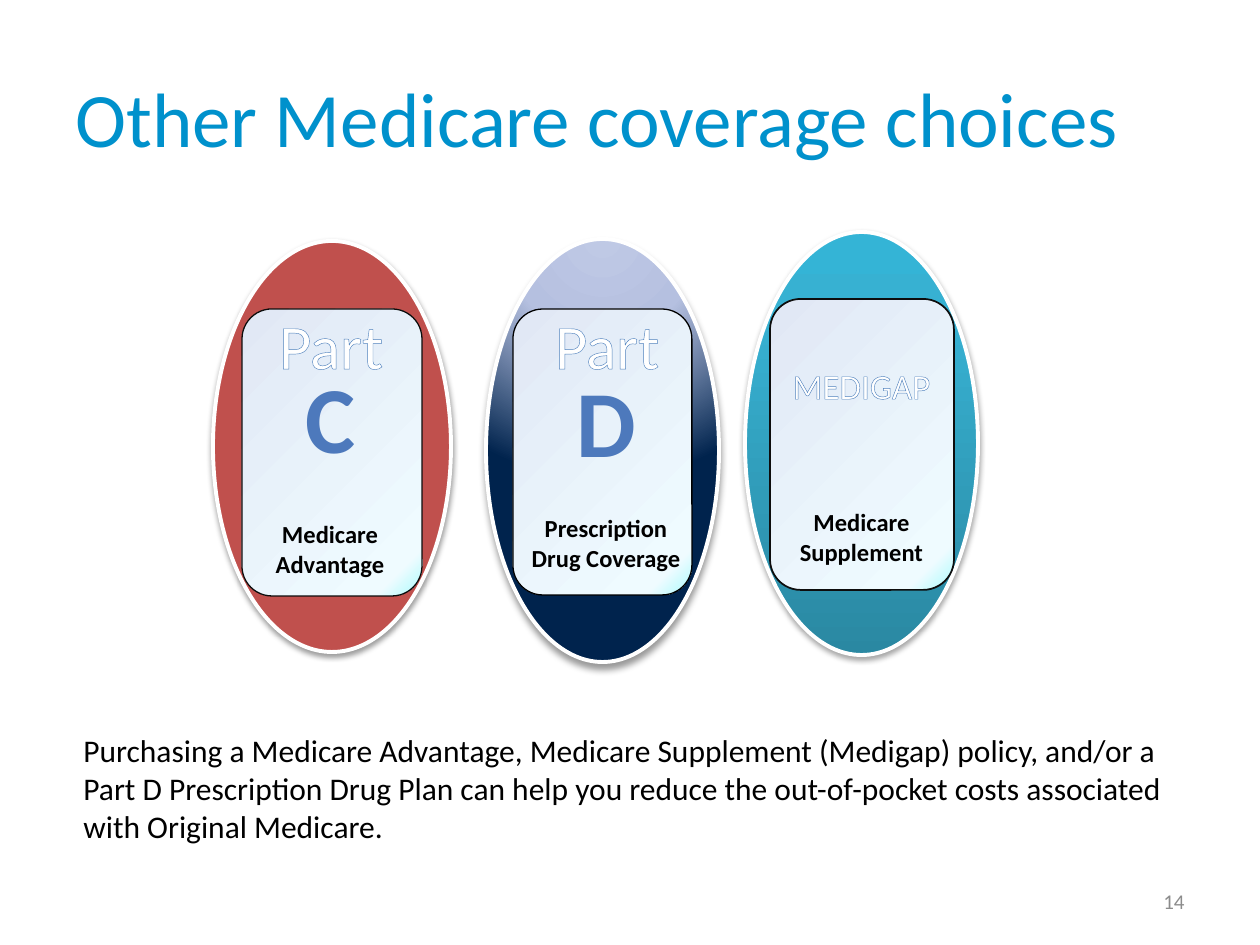
from lxml.etree import SubElement
from pptx import Presentation
from pptx.dml.color import RGBColor
from pptx.enum.shapes import MSO_SHAPE
from pptx.enum.text import MSO_ANCHOR, PP_ALIGN
from pptx.oxml.ns import qn
from pptx.util import Emu, Pt

TITLE = "Other Medicare coverage choices"
NOTE = ("Purchasing a Medicare Advantage, Medicare Supplement (Medigap) policy, "
        "and/or a Part D Prescription Drug Plan can help you reduce the "
        "out-of-pocket costs associated with Original Medicare.")
NUMBER = "14"

GLASS = {"stops": [(0, "ABFBFD"), (10, "EFFBFF"), (100, "E1E8F5")],
         "rect": (100, 100, 0, 0)}
NAVY = {"stops": [(0, "BFC9E5"), (40, "B5C0E0"), (100, "00234D")],
        "rect": (50, -80, 50, 180)}
TEAL = {"stops": [(0, "2A88A2"), (80, "37B1D2"), (100, "34B4D6")], "angle": 270}
INK = {"stops": [(0, "7494C9"), (49, "4D79BC"), (50, "346AAA"),
                 (92, "325F94"), (100, "315D91")], "angle": 90}

PLANS = [
    {"oval": (213, 241, 238, 411), "fill": "C0504D", "shade": (38, 3.1, 1.6),
     "card": (242, 309, 180, 287), "edge": ("0D0D0D", 0.75),
     "head": ("Part", 36, (263, 300, 136, 89)),
     "mark": ("C", (261, 353, 139, 127)),
     "label": ("Medicare Advantage", (238, 513, 184, 72))},
    {"oval": (486, 239, 233, 423), "fill": NAVY, "shade": (40, 4, 3),
     "card": (513, 309, 179, 286), "edge": ("000000", 0.75),
     "head": ("Part", 36, (539, 300, 136, 89)),
     "mark": ("D", (537, 357, 139, 127)),
     "label": ("Prescription Drug Coverage", (514, 507, 184, 72))},
    {"oval": (745, 232, 233, 423), "fill": TEAL, "shade": (35, 3.1, 1.8),
     "card": (770, 299, 184, 291), "edge": ("0D0D0D", 1),
     "head": ("MEDIGAP", 20, (769, 358, 185, 56)),
     "mark": None,
     "label": ("Medicare Supplement", (769, 501, 185, 72))},
]


def px(n):
    return Emu(round(n * 914400 / 126))


def color(code):
    return RGBColor.from_string(code)


def node(host, tag, **attrs):
    return SubElement(host, qn(tag), {k: str(v) for k, v in attrs.items()})


def paint(fill, host, look):
    if isinstance(look, str):
        fill.solid()
        fill.fore_color.rgb = color(look)
        return
    fill.background()
    old = host.find(qn("a:noFill"))
    grad = node(host, "a:gradFill", rotWithShape=1)
    stops = node(grad, "a:gsLst")
    for at, code in look["stops"]:
        stop = node(stops, "a:gs", pos=at * 1000)
        node(stop, "a:srgbClr", val=code)
    if "rect" in look:
        ring = node(grad, "a:path", path="circle")
        sides = {k: v * 1000 for k, v in zip("ltrb", look["rect"])}
        node(ring, "a:fillToRect", **sides)
    else:
        node(grad, "a:lin", ang=look["angle"] * 60000, scaled=0)
    host.replace(old, grad)


def form(kind, box, look, edge, width):
    shape = slide.shapes.add_shape(kind, *map(px, box))
    shape.shadow.inherit = False
    paint(shape.fill, shape.element.spPr, look)
    shape.line.color.rgb = color(edge)
    shape.line.width = Pt(width)
    return shape


def shade(shape, alpha, blur, dist):
    host = shape.element.spPr.find(qn("a:effectLst"))
    drop = node(host, "a:outerShdw", blurRad=Pt(blur), dist=Pt(dist),
                dir=5400000, rotWithShape=0)
    tone = node(drop, "a:srgbClr", val="000000")
    node(tone, "a:alpha", val=alpha * 1000)


def write(text, box, size, look, align=PP_ALIGN.CENTER, bold=False,
          anchor=MSO_ANCHOR.TOP):
    frame = slide.shapes.add_textbox(*map(px, box)).text_frame
    frame.word_wrap = True
    frame.vertical_anchor = anchor
    frame.text = text
    para = frame.paragraphs[0]
    para.alignment = align
    run = para.runs[0]
    run.font.name = "Calibri"
    run.font.size = Pt(size)
    run.font.bold = bold
    paint(run.font.fill, run.font._element, look)
    return run


def trace(run, code, width):
    host = run.font._element
    line = node(host, "a:ln", w=Pt(width))
    node(node(line, "a:solidFill"), "a:srgbClr", val=code)
    host.insert(0, line)


deck = Presentation()
deck.slide_width, deck.slide_height = px(1260), px(945)
slide = deck.slides.add_slide(deck.slide_layouts[6])

write(TITLE, (63, 38, 1134, 157), 44, "0091CC", PP_ALIGN.LEFT,
      anchor=MSO_ANCHOR.MIDDLE)

for plan in PLANS:
    oval = form(MSO_SHAPE.OVAL, plan["oval"], plan["fill"], "FFFFFF", 2.25)
    shade(oval, *plan["shade"])
    form(MSO_SHAPE.ROUNDED_RECTANGLE, plan["card"], GLASS, *plan["edge"])
    text, box = plan["label"]
    write(text, box, 14, "000000", bold=True)
    if plan["mark"]:
        text, box = plan["mark"]
        write(text, box, 54, INK, bold=True)
    text, size, box = plan["head"]
    trace(write(text, box, size, "FFFFFF"), "4F81BD", 0.8)

write(NOTE, (71, 725, 1116, 127), 18, "000000", PP_ALIGN.LEFT)
write(NUMBER, (903, 876, 294, 50), 12, "8C8C8C", PP_ALIGN.RIGHT,
      anchor=MSO_ANCHOR.MIDDLE)

deck.save("out.pptx")
